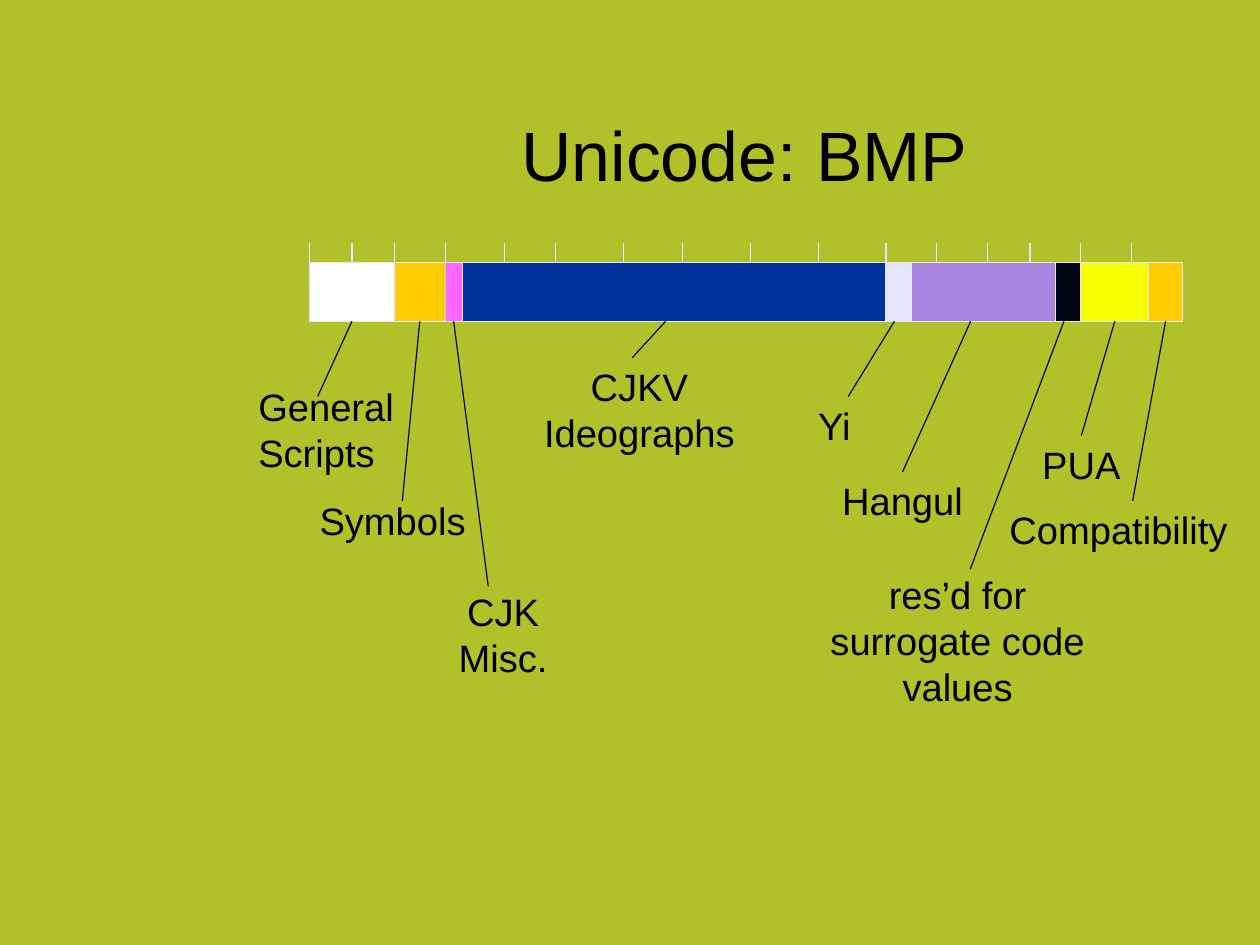
from dataclasses import dataclass
from itertools import accumulate

from pptx import Presentation
from pptx.dml.color import RGBColor
from pptx.enum.shapes import MSO_CONNECTOR, MSO_SHAPE
from pptx.enum.text import MSO_ANCHOR, PP_ALIGN
from pptx.oxml.ns import qn
from pptx.shapes.autoshape import Shape
from pptx.shapes.connector import Connector
from pptx.shapes.shapetree import SlideShapes
from pptx.util import Cm, Pt


@dataclass(frozen=True)
class Theme:
    back: str = "B1C12A"
    ink: str = "000000"
    edge: str = "E5E5FF"
    font: str = "Arial"
    title: int = 44
    label: int = 24
    line: float = 0.75


@dataclass(frozen=True)
class Label:
    text: str
    left: float
    top: float
    width: float
    height: float = 1.24
    inset: float = 0.13
    align: PP_ALIGN = PP_ALIGN.CENTER


@dataclass(frozen=True)
class Block:
    """A range of the bar, its label, and where its leader starts and ends."""
    units: int
    color: str
    start: int
    end: tuple[float, float]
    label: Label


THEME = Theme()
BAR_LEFT, BAR_TOP, BAR_WIDTH, BAR_HEIGHT = 6.88, 5.84, 19.4, 1.3
TICK_TOP = 5.41
NEAR = 0.05
TICKS = (0, 5, 10, 16, 23, 29, 37, 44, 52, 60, 68, 74, 80, 85, 91, 97)
BLOCKS = (
    Block(10, "FFFFFF", 5, (7.06, 8.81),
          Label("General\nScripts", 5.74, 8.59, 3.45, 2.03, align=PP_ALIGN.LEFT)),
    Block(6, "FFCC00", 13, (8.94, 11.13), Label("Symbols", 6.96, 10.92, 3.53)),
    Block(2, "FF66FF", 17, (10.85, 13.03), Label("CJK Misc.", 9.3, 12.95, 3.76, 2.24)),
    Block(50, "003399", 42, (14.05, 7.95),
          Label("CJKV Ideographs", 11.2, 7.95, 6.02, 2.24)),
    Block(3, "E5E5FF", 69, (18.85, 8.81), Label("Yi", 17.88, 8.81, 1.32)),
    Block(17, "A886E0", 78, (20.07, 10.49), Label("Hangul", 18.52, 10.49, 3.07)),
    Block(3, "000514", 89, (21.56, 12.65),
          Label("res’d for surrogate code values", 18.36, 12.7, 5.84, 2.95, 0)),
    Block(8, "F7FF00", 95, (24.08, 9.68), Label("PUA", 22.99, 9.68, 2.08)),
    Block(4, "FFCC00", 101, (25.17, 11.13), Label("Compatibility", 22.38, 11.13, 4.95)),
)
UNIT = BAR_WIDTH / sum(block.units for block in BLOCKS)


def place(units: float) -> float:
    """Turn bar units into centimetres from the slide's left edge."""
    return BAR_LEFT + units * UNIT


def add_text(shapes: SlideShapes, label: Label, size: int,
             anchor: MSO_ANCHOR = MSO_ANCHOR.TOP, side: float = 0) -> Shape:
    box = shapes.add_textbox(Cm(label.left), Cm(label.top),
                             Cm(label.width), Cm(label.height))
    frame = box.text_frame
    form = {"word_wrap": True, "vertical_anchor": anchor,
            "margin_left": Cm(side), "margin_right": Cm(side),
            "margin_top": Cm(label.inset), "margin_bottom": Cm(label.inset)}
    for name, value in form.items():
        setattr(frame, name, value)
    frame.text = label.text
    for para in frame.paragraphs:
        para.alignment = label.align
        para.font.name = THEME.font
        para.font.size = Pt(size)
        para.font.color.rgb = RGBColor.from_string(THEME.ink)
    if len(frame.paragraphs) > 1:
        frame.paragraphs[0].line_spacing = 0.8
    return box


def add_line(shapes: SlideShapes, start: tuple[float, float],
             end: tuple[float, float], color: str) -> Connector:
    line = shapes.add_connector(MSO_CONNECTOR.STRAIGHT, *map(Cm, start + end))
    line.line.color.rgb = RGBColor.from_string(color)
    line.line.width = Pt(THEME.line)
    props = line._element.spPr
    props.append(props.makeelement(qn("a:effectLst"), {}))
    return line


def add_block(shapes: SlideShapes, block: Block, first: int) -> Shape:
    rect = shapes.add_shape(MSO_SHAPE.RECTANGLE, Cm(place(first)), Cm(BAR_TOP),
                            Cm(block.units * UNIT), Cm(BAR_HEIGHT))
    rect.shadow.inherit = False
    rect.fill.solid()
    rect.fill.fore_color.rgb = RGBColor.from_string(block.color)
    rect.line.color.rgb = RGBColor.from_string(THEME.edge)
    rect.line.width = Pt(THEME.line)
    return rect


def add_leader(shapes: SlideShapes, block: Block, first: int,
               rect: Shape, box: Shape) -> None:
    """Draw the leader, joined wherever it meets the middle of a side."""
    start = (place(block.start), BAR_TOP + BAR_HEIGHT)
    line = add_line(shapes, start, block.end, THEME.ink)
    if block.start == first + block.units / 2:
        line.begin_connect(rect, 2)
    label = block.label
    gap = (block.end[0] - label.left - label.width / 2, block.end[1] - label.top)
    if max(map(abs, gap)) < NEAR:
        line.end_connect(box, 0)


def main() -> None:
    deck = Presentation()
    deck.slide_width, deck.slide_height = Cm(28), Cm(21)
    slide = deck.slides.add_slide(deck.slide_layouts[6])
    slide.background.fill.solid()
    slide.background.fill.fore_color.rgb = RGBColor.from_string(THEME.back)
    shapes = slide.shapes

    title = Label("Unicode: BMP", 5.1, 2.31, 22.9, 2.16)
    add_text(shapes, title, THEME.title, MSO_ANCHOR.BOTTOM, 0.25)
    firsts = list(accumulate((block.units for block in BLOCKS[:-1]), initial=0))
    rects = [add_block(shapes, *pair) for pair in zip(BLOCKS, firsts)]
    for tick in TICKS:
        add_line(shapes, (place(tick), BAR_TOP), (place(tick), TICK_TOP), THEME.edge)
    for block, first, rect in zip(BLOCKS, firsts, rects):
        box = add_text(shapes, block.label, THEME.label)
        add_leader(shapes, block, first, rect, box)
    deck.save("out.pptx")


if __name__ == "__main__":
    main()
